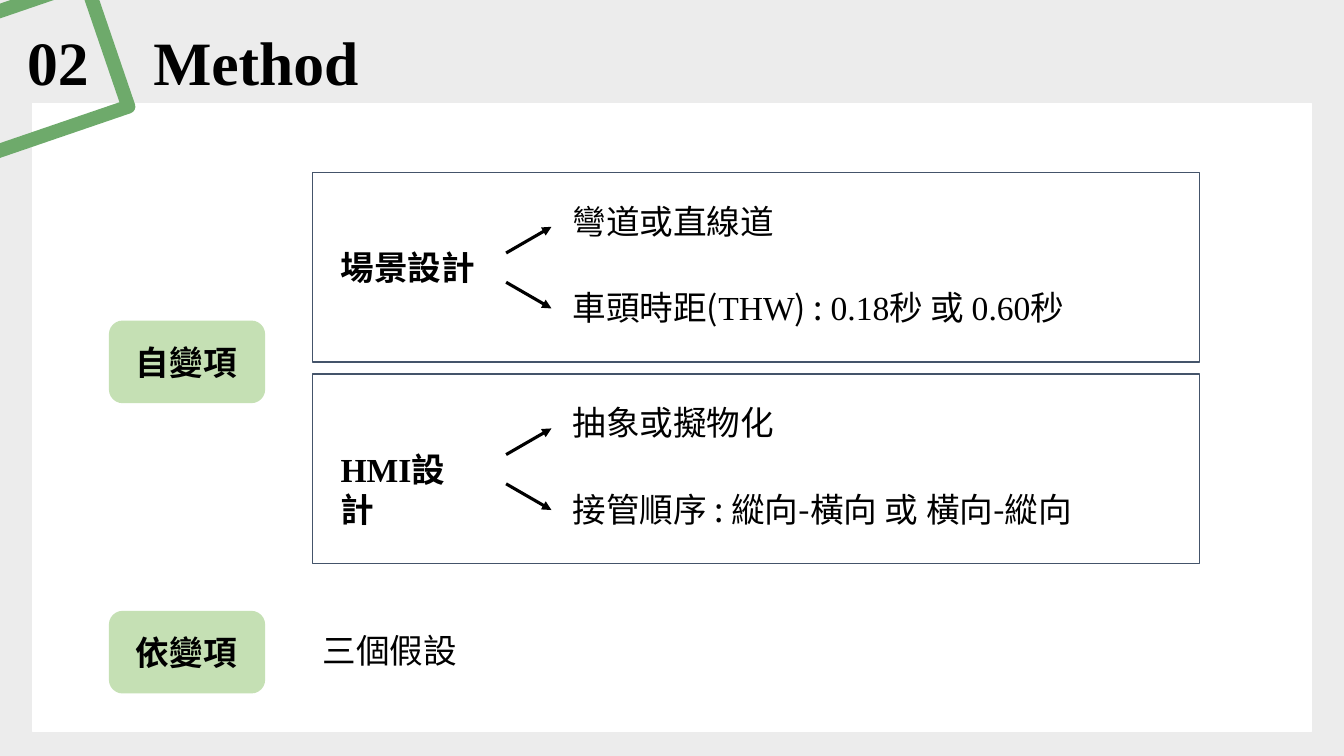
from dataclasses import dataclass

from lxml import etree
from pptx import Presentation
from pptx.dml.color import RGBColor
from pptx.enum.shapes import MSO_CONNECTOR, MSO_SHAPE
from pptx.enum.text import MSO_ANCHOR, MSO_AUTO_SIZE, PP_ALIGN
from pptx.oxml.ns import qn
from pptx.util import Emu, Pt

RECT, ROUND = MSO_SHAPE.RECTANGLE, MSO_SHAPE.ROUNDED_RECTANGLE
STRAIGHT = MSO_CONNECTOR.STRAIGHT
TOP, LEFT, FIXED = MSO_ANCHOR.TOP, PP_ALIGN.LEFT, MSO_AUTO_SIZE.NONE

PX = 9144  # 100 px to the inch
SANS, SERIF = "Noto Sans CJK SC", "Times New Roman"
BLACK, WHITE, GREY = "000000", "FFFFFF", "ECECEC"
GREEN, PALE, SLATE = "6EAA6B", "C5E0B4", "44546A"


@dataclass
class Box:
    left: int
    top: int
    width: int
    height: int

    def emu(self) -> list[Emu]:
        return [Emu(n * PX) for n in (self.left, self.top, self.width, self.height)]


@dataclass
class Card:
    """A framed factor whose label points at two levels."""
    top: int
    label: str
    levels: tuple[str, str]


@dataclass
class Tag:
    top: int
    label: str


CARDS = [
    Card(171, "場景設計", ("彎道或直線道", "車頭時距(|THW|) : |0.18|秒 或 |0.60|秒")),
    Card(371, "|HMI|設計", ("抽象或擬物化", "接管順序 : 縱向-橫向 或 橫向-縱向")),
]
TAGS = [Tag(318, "自變項"), Tag(606, "依變項")]


def color(code: str) -> RGBColor:
    return RGBColor.from_string(code)


def add_box(slide, kind, box: Box, fill: str = "", line: str = "", weight: float = 1):
    shape = slide.shapes.add_shape(kind, *box.emu())
    shape.shadow.inherit = False
    if fill:
        shape.fill.solid()
        shape.fill.fore_color.rgb = color(fill)
    else:
        shape.fill.background()
    if line:
        shape.line.color.rgb = color(line)
        shape.line.width = Pt(weight)
    else:
        shape.line.fill.background()
    return shape


def style(run, font: str, size: int, bold: bool) -> None:
    run.font.name = font
    run.font.size = Pt(size)
    run.font.bold = bold
    run.font.color.rgb = color(BLACK)
    east = etree.SubElement(run.font._element, qn("a:ea"))
    east.set("typeface", SANS)


def fill_text(shape, text: str, size: int, bold: bool) -> None:
    """Write text in which bars switch between sans and serif."""
    frame = shape.text_frame
    frame.word_wrap = True
    frame.auto_size = FIXED
    frame.vertical_anchor = TOP
    line = frame.paragraphs[0]
    line.alignment = LEFT
    for index, part in enumerate(text.split("|")):
        if part:
            run = line.add_run()
            run.text = part
            style(run, SERIF if index % 2 else SANS, size, bold)


def add_text(slide, box: Box, text: str, size: int = 24, bold: bool = False) -> None:
    fill_text(slide.shapes.add_textbox(*box.emu()), text, size, bold)


def add_arrow(slide, start: tuple[int, int], end: tuple[int, int]) -> None:
    ends = [Emu(n * PX) for n in start + end]
    arrow = slide.shapes.add_connector(STRAIGHT, *ends)
    arrow.line.color.rgb = color(BLACK)
    arrow.line.width = Pt(2.25)
    etree.SubElement(arrow.line._get_or_add_ln(), qn("a:tailEnd")).set("type", "triangle")
    etree.SubElement(arrow._element.spPr, qn("a:effectLst"))


def add_card(slide, card: Card) -> None:
    add_box(slide, RECT, Box(310, card.top, 880, 188), line=SLATE)
    add_text(slide, Box(328, card.top + 69, 155, 50), card.label, bold=True)
    for level, drop, start, end in zip(card.levels, (23, 109), (80, 109), (54, 135)):
        add_text(slide, Box(558, card.top + drop, 576, 50), level)
        add_arrow(slide, (502, card.top + start), (547, card.top + end))


def add_tag(slide, tag: Tag) -> None:
    add_box(slide, ROUND, Box(108, tag.top, 155, 82), fill=PALE)
    add_text(slide, Box(125, tag.top + 16, 121, 50), tag.label, bold=True)


def add_head(slide) -> None:
    add_box(slide, RECT, Box(32, 103, 1269, 623), WHITE, WHITE)
    frame = add_box(slide, RECT, Box(-30, 1, 140, 131), line=GREEN, weight=10)
    frame.rotation = 341.1
    add_text(slide, Box(17, 19, 83, 84), "|02", 44, True)
    title = slide.shapes.title
    title.left, title.top, title.width, title.height = Box(142, 19, 226, 84).emu()
    fill_text(title, "|Method", 44, True)


def main() -> None:
    deck = Presentation()
    deck.slide_width, deck.slide_height = Emu(1333 * PX), Emu(750 * PX)
    slide = deck.slides.add_slide(deck.slide_layouts.get_by_name("Title Only"))
    slide.background.fill.solid()
    slide.background.fill.fore_color.rgb = color(GREY)
    add_head(slide)
    for card in CARDS:
        add_card(slide, card)
    for tag in TAGS:
        add_tag(slide, tag)
    add_text(slide, Box(310, 620, 155, 50), "|三個假設")
    deck.save("out.pptx")


if __name__ == "__main__":
    main()
